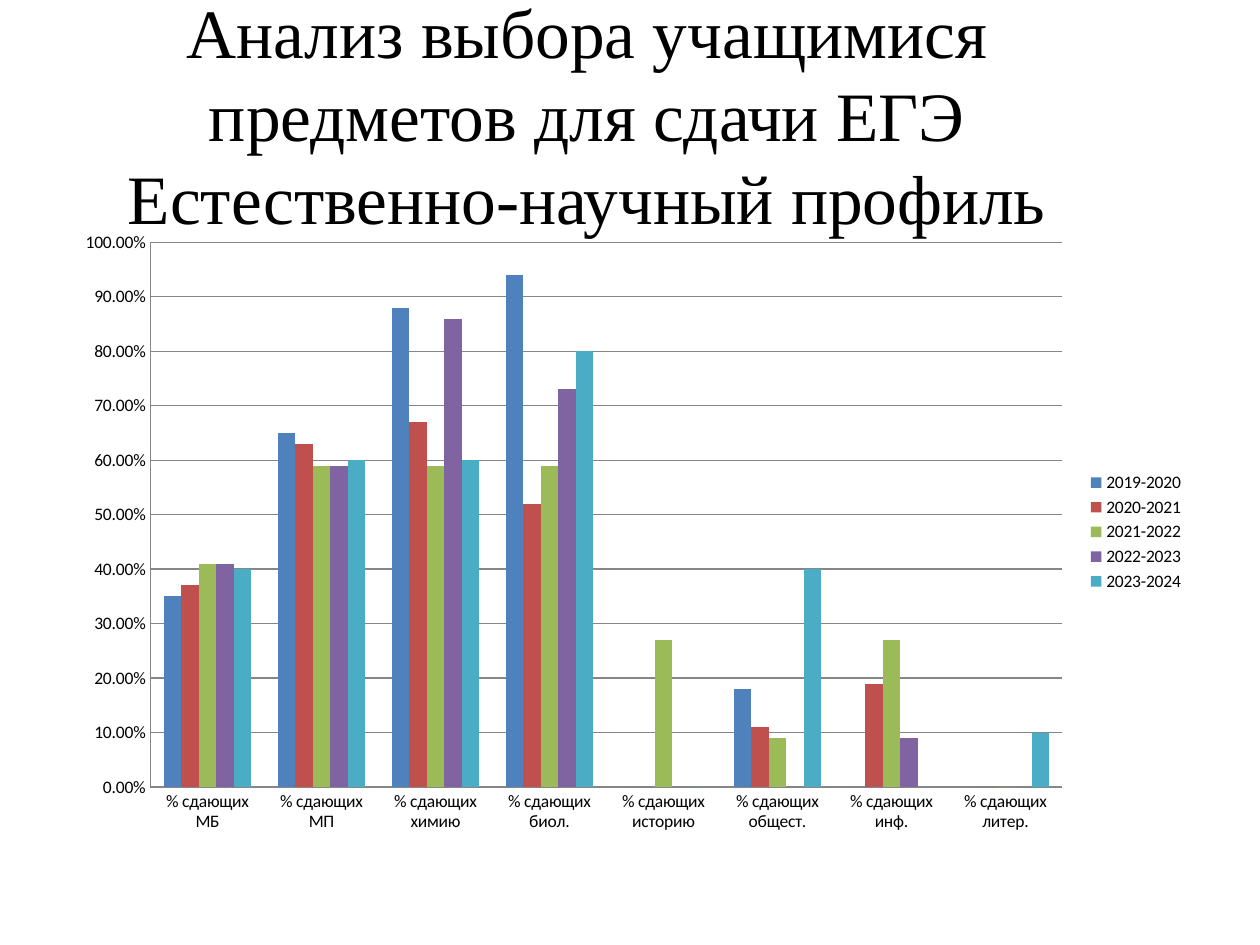
"""Build a slide charting the exam subjects chosen by science-profile pupils."""
from dataclasses import dataclass

from pptx import Presentation
from pptx import util as u
from pptx.chart.data import CategoryChartData
from pptx.dml.color import RGBColor
from pptx.enum import chart as ch
from pptx.enum import text

PX_PER_INCH = 126
BLACK, GREY = "000000", "868686"
SUBJECTS = ["МБ", "МП", "химию", "биол.", "историю", "общест.", "инф.", "литер."]


@dataclass(frozen=True)
class Box:
    left: int
    top: int
    width: int
    height: int

    def emu(self) -> list[u.Emu]:
        return [px(n) for n in (self.left, self.top, self.width, self.height)]


@dataclass(frozen=True)
class Year:
    name: str
    shares: tuple[float, ...]
    color: str


YEARS = [
    Year("2019-2020", (0.35, 0.65, 0.88, 0.94, 0, 0.18, 0, 0), "4F81BD"),
    Year("2020-2021", (0.37, 0.63, 0.67, 0.52, 0, 0.11, 0.19, 0), "C0504D"),
    Year("2021-2022", (0.41, 0.59, 0.59, 0.59, 0.27, 0.09, 0.27, 0), "9BBB59"),
    Year("2022-2023", (0.41, 0.59, 0.86, 0.73, 0, 0, 0.09, 0), "8064A2"),
    Year("2023-2024", (0.4, 0.6, 0.6, 0.8, 0, 0.4, 0, 0.1), "4BACC6"),
]


def px(length: int) -> u.Emu:
    return u.Emu(round(length * 914400 / PX_PER_INCH))


def rgb(color: str) -> RGBColor:
    return RGBColor.from_string(color)


def add_title(slide, box: Box, wording: str) -> None:
    text_frame = slide.shapes.add_textbox(*box.emu()).text_frame
    text_frame.word_wrap = True
    text_frame.auto_size = text.MSO_AUTO_SIZE.NONE
    text_frame.vertical_anchor = text.MSO_ANCHOR.MIDDLE
    text_frame.text = wording
    paragraph = text_frame.paragraphs[0]
    paragraph.alignment = text.PP_ALIGN.CENTER
    for run in paragraph.runs:
        run.font.name = "Times New Roman"
        run.font.size = u.Pt(39.6)
        run.font.color.rgb = rgb(BLACK)


def style_line(line) -> None:
    line.color.rgb = rgb(GREY)
    line.width = u.Pt(0.75)


def add_subject_chart(slide, box: Box, years: list[Year]) -> None:
    data = CategoryChartData(number_format="0.00%")
    data.categories = [f"% сдающих {subject}" for subject in SUBJECTS]
    for year in years:
        data.add_series(year.name, year.shares)
    chart = slide.shapes.add_chart(
        ch.XL_CHART_TYPE.COLUMN_CLUSTERED, *box.emu(), data).chart
    chart.has_title = False
    chart.font.name = "Calibri"
    chart.font.size = u.Pt(10)
    chart.font.color.rgb = rgb(BLACK)
    chart.has_legend = True
    chart.legend.position = ch.XL_LEGEND_POSITION.RIGHT
    chart.legend.include_in_layout = False

    for axis in (chart.category_axis, chart.value_axis):
        axis.major_tick_mark = axis.minor_tick_mark = ch.XL_TICK_MARK.NONE
        style_line(axis.format.line)
    value_axis = chart.value_axis
    value_axis.minimum_scale, value_axis.maximum_scale = 0, 1
    value_axis.major_unit = 0.1
    value_axis.tick_labels.number_format = "0.00%"
    value_axis.tick_labels.number_format_is_linked = False
    style_line(value_axis.major_gridlines.format.line)

    plot = chart.plots[0]
    plot.gap_width, plot.overlap = 150, 0
    plot.vary_by_categories = False
    for series, year in zip(plot.series, years):
        series.format.fill.solid()
        series.format.fill.fore_color.rgb = rgb(year.color)


def main() -> None:
    presentation = Presentation()
    presentation.slide_width, presentation.slide_height = px(1260), px(945)
    slide = presentation.slides.add_slide(presentation.slide_layouts[6])
    add_title(slide, Box(63, 38, 1048, 152),
              "Анализ выбора учащимися предметов для сдачи ЕГЭ\v"
              "Естественно-научный профиль")
    add_subject_chart(slide, Box(63, 220, 1134, 624), YEARS)
    presentation.save("out.pptx")


if __name__ == "__main__":
    main()
